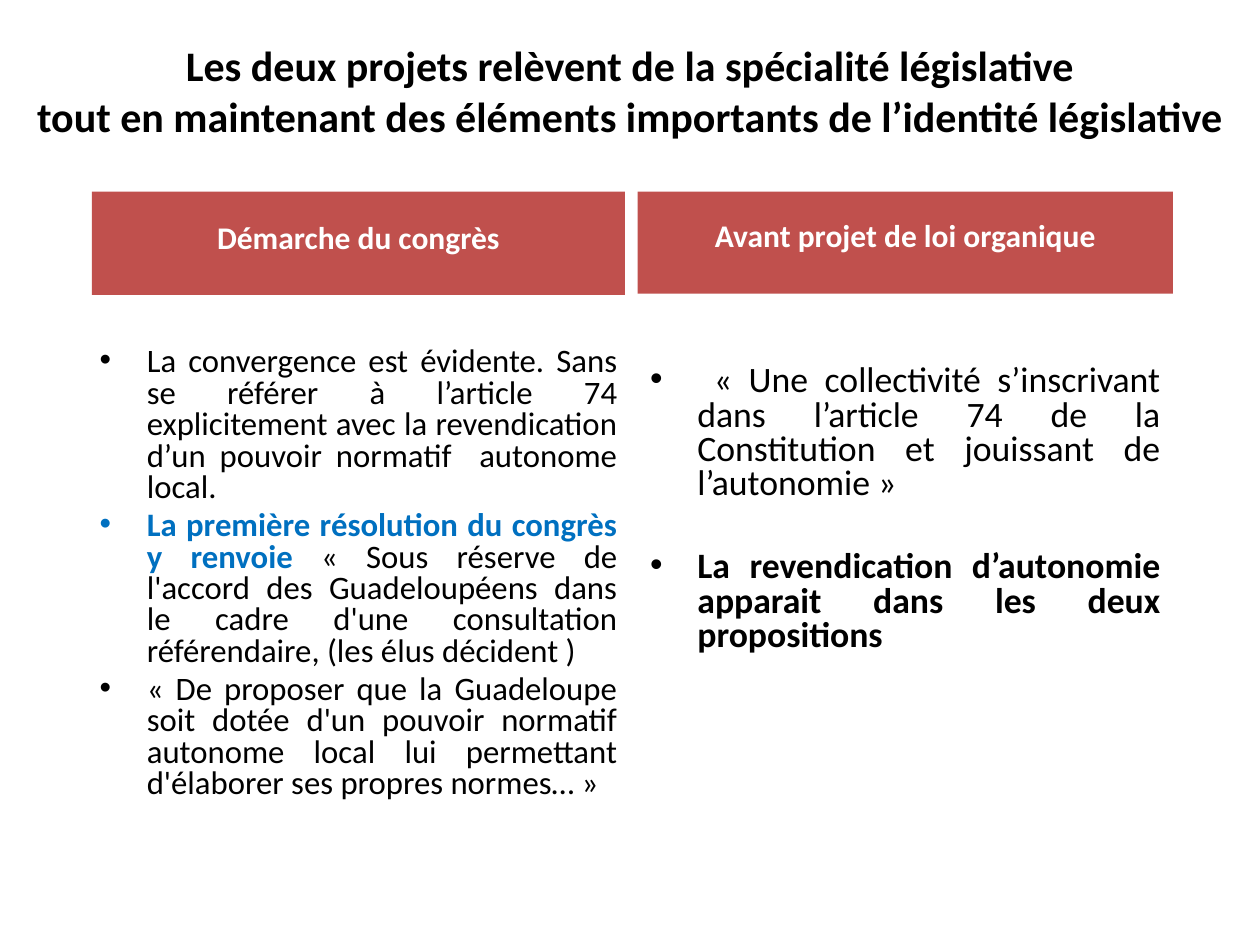
from pptx import Presentation
from pptx.dml.color import RGBColor
from pptx.enum.shapes import MSO_SHAPE
from pptx.enum.text import MSO_ANCHOR, MSO_AUTO_SIZE, PP_ALIGN
from pptx.util import Inches, Pt

BLACK = RGBColor(0x00, 0x00, 0x00)
WHITE = RGBColor(0xFF, 0xFF, 0xFF)
RED = RGBColor(0xC0, 0x50, 0x4D)
BLUE = RGBColor(0x00, 0x70, 0xC0)
FONT = "Calibri"

TITLE = [
    "Les deux projets relèvent de la spécialité législative",
    "tout en maintenant des éléments importants de l’identité législative",
]

# Each bullet is a list of runs: text, bold, colour
CONGRESS_BULLETS = [
    [("La convergence est évidente. Sans se référer à l’article 74 "
      "explicitement avec la revendication d’un pouvoir normatif  autonome "
      "local.", False, BLACK)],
    [("La première résolution du congrès y renvoie ", True, BLUE),
     ("« Sous réserve de l'accord des Guadeloupéens dans le cadre d'une "
      "consultation référendaire, (les élus décident )", False, BLACK)],
    [("« De proposer que la Guadeloupe soit dotée d'un pouvoir normatif "
      "autonome local lui permettant d'élaborer ses propres normes… »",
      False, BLACK)],
]
BILL_BULLETS = [
    [(" « Une collectivité s’inscrivant dans l’article 74 de la "
      "Constitution et jouissant de l’autonomie »", False, BLACK)],
    [("La revendication d’autonomie apparait dans les deux propositions",
      True, BLACK)],
]


def place(shape, left, top, width, height):
    shape.left, shape.top = Inches(left), Inches(top)
    shape.width, shape.height = Inches(width), Inches(height)


def add_run(para, text, size, bold, color):
    run = para.add_run()
    run.text = text
    run.font.name = FONT
    run.font.size = Pt(size)
    run.font.bold = bold
    run.font.color.rgb = color


def fill_title(title, lines):
    place(title, 0, 0.25, 10, 0.93)
    frame = title.text_frame
    frame.auto_size = MSO_AUTO_SIZE.NONE
    frame.vertical_anchor = MSO_ANCHOR.MIDDLE
    para = frame.paragraphs[0]
    para.alignment = PP_ALIGN.CENTER
    for index, line in enumerate(lines):
        if index:
            para.add_line_break()
        add_run(para, line, 24, True, BLACK)


def fill_bullets(body, bounds, bullets, size, gap):
    place(body, *bounds)
    frame = body.text_frame
    frame.auto_size = MSO_AUTO_SIZE.NONE
    for index, runs in enumerate(bullets):
        para = frame.add_paragraph() if index else frame.paragraphs[0]
        para.alignment = PP_ALIGN.JUSTIFY
        para.line_spacing = 0.8
        para.space_before = Pt(gap if index else 0)
        for text, bold, color in runs:
            add_run(para, text, size, bold, color)


def add_header(slide, bounds, text):
    box = slide.shapes.add_shape(MSO_SHAPE.RECTANGLE, *map(Inches, bounds))
    box.shadow.inherit = False
    box.fill.solid()
    box.fill.fore_color.rgb = RED
    box.line.fill.background()
    frame = box.text_frame
    frame.word_wrap = True
    frame.vertical_anchor = MSO_ANCHOR.BOTTOM
    frame.margin_left = frame.margin_right = Inches(0.07)
    frame.margin_top = Inches(0.04)
    frame.margin_bottom = Inches(0.31)
    para = frame.paragraphs[0]
    para.alignment = PP_ALIGN.CENTER
    para.line_spacing = 0.9
    add_run(para, text, 18, True, WHITE)


def main():
    deck = Presentation()
    deck.slide_width, deck.slide_height = Inches(10), Inches(7.5)
    slide = deck.slides.add_slide(deck.slide_layouts[3])
    title, left_body, right_body = list(slide.placeholders)[:3]
    for extra in list(slide.placeholders)[3:]:
        extra.element.getparent().remove(extra.element)

    # Title and the two columns of arguments
    fill_title(title, TITLE)
    fill_bullets(left_body, (0.69, 2.71, 4.31, 3.94), CONGRESS_BULLETS,
                 18.7, 3.7)
    fill_bullets(right_body, (5.06, 2.85, 4.25, 2.79), BILL_BULLETS, 20.4, 28)

    # Column headers
    add_header(slide, (0.73, 1.52, 4.23, 0.82), "Démarche du congrès")
    add_header(slide, (5.06, 1.52, 4.25, 0.81), "Avant projet de loi organique")

    deck.save("out.pptx")


if __name__ == "__main__":
    main()
